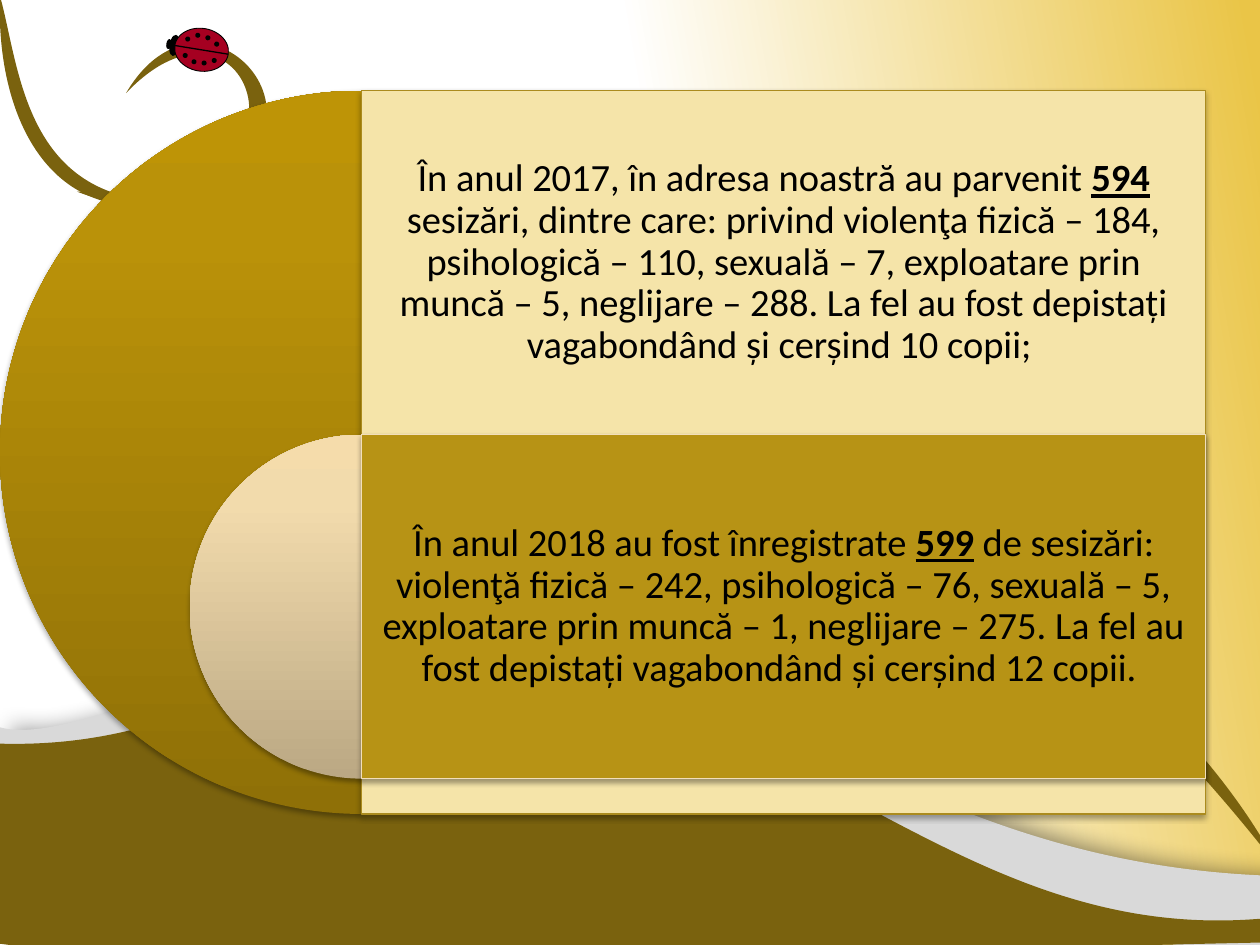
from dataclasses import dataclass
from math import cos, radians, sin

from lxml import etree
from pptx import Presentation
from pptx.dml.color import RGBColor
from pptx.enum.shapes import MSO_CONNECTOR, MSO_SHAPE
from pptx.enum.text import MSO_ANCHOR, PP_ALIGN
from pptx.oxml.ns import qn
from pptx.util import Inches, Pt

PIE, RECT, OVAL = MSO_SHAPE.PIE, MSO_SHAPE.RECTANGLE, MSO_SHAPE.OVAL
LINE = MSO_CONNECTOR.STRAIGHT
MIDDLE, CENTER = MSO_ANCHOR.MIDDLE, PP_ALIGN.CENTER


@dataclass(frozen=True)
class Theme:
    font: str = "Calibri"
    size: float = 22
    ink: str = "000000"
    sky: tuple = ((55, "FFFFFF"), (99, "EAC547"))
    mist: str = "D9D9D9"
    earth: str = "7A620E"
    bug: str = "A50021"
    gold: tuple = ((0, "8F7007"), (80, "BA9209"), (100, "BE9406"))
    sand: tuple = ((0, "BBA884"), (80, "F2DBAC"), (100, "F5DCAB"))
    pale: str = "F5E4A9"
    pale_edge: str = "AB8B1E"
    deep: str = "B79315"
    deep_edge: str = "F2DFBA"


@dataclass(frozen=True)
class Box:
    x: float
    y: float
    w: float
    h: float

    def emu(self):
        return [Inches(v) for v in (self.x, self.y, self.w, self.h)]


THEME = Theme()
SOFT = (35, 3.1, 1.8, 90)
WIDE = (40, 13, 10, 0)

# Frame, turn, then a start point and segments: two numbers make a line, six a curve.
MIST = (Box(-0.04, 4.99, 10.11, 2.6), 0, [
    (-0.04, 5.76), (-0.03, 6.2), (10.07, 7.6), (10.06, 6.95),
    (7.25, 6.84, 6.08, 5.27, 3.74, 4.99), (2.09, 4.96, 0.56, 5.99, -0.04, 5.76)])
PLANTS = [
    (Box(2.73, 1.84, 4.15, 9.8), 254.9, [
        (10.02, 7.29), (10.04, 7.48), (8.35, 7.51, 1.6, 7.73, -0.07, 7.48),
        (-0.05, 5.9), (2.05, 5.98, 2.32, 4.54, 5.2, 5.58),
        (7, 6.31, 8.16, 7.45, 10.02, 7.29)]),
    (Box(6.9, 2.42, 2.78, 1.97), 347.8, [
        (7.53, 4.57), (7.67, 4.12, 7.72, 3.33, 9.48, 2.33),
        (8.75, 2.24, 7.46, 2.47, 7.03, 2.95), (6.71, 3.4, 6.98, 4.17, 7.53, 4.57)]),
    (Box(7.09, 2.48, 2.59, 1.89), 347.8, [
        (7.53, 4.57), (6.91, 3.66, 7.54, 2.52, 9.48, 2.33),
        (8.75, 2.24, 7.92, 2.62, 7.49, 3.11), (7.18, 3.55, 6.98, 4.17, 7.53, 4.57)]),
    (Box(6.35, 4.97, 2.78, 1.97), 300.2, [
        (9.09, 5.6), (8.61, 5.59, 7.85, 5.4, 6.35, 6.75),
        (6.49, 6.04, 7.11, 4.88, 7.7, 4.62), (8.23, 4.46, 8.87, 4.95, 9.09, 5.6)]),
    (Box(6.43, 5.11, 2.59, 1.89), 300.2, [
        (9.09, 5.6), (8.41, 4.73, 7.13, 4.98, 6.35, 6.75),
        (6.49, 6.04, 7.11, 5.37, 7.71, 5.11), (8.23, 4.95, 8.87, 4.95, 9.09, 5.6)]),
    (Box(4.62, 4.32, 5.37, 3.11), 226.8, [
        (4.64, 5.32), (6.02, 3.99, 7.69, 3.73, 10.15, 6.89),
        (9.46, 5.58, 7.96, 4.46, 6.76, 4.1), (5.74, 3.91, 4.62, 4.06, 4.64, 5.32)]),
    (Box(0, -0.03, 2.12, 1.66), 0, [
        (0, -0.03), (0.14, 0.47, 0.18, 1.36, 1, 1.56),
        (2.61, 1.5, 1.96, -0.27, 1, 0.74), (1.7, -0.45, 3.12, 1.4, 1, 1.63),
        (0.27, 1.56, -0.03, 0.77, 0, -0.03)]),
    (Box(0.43, 1.68, 1.28, 1.04), 275.2, [
        (0.61, 1.52), (0.91, 1.64, 1.47, 1.71, 1.55, 2.22),
        (1.42, 3.18, 0.35, 2.69, 1.03, 2.17), (0.25, 2.52, 1.33, 3.48, 1.59, 2.22),
        (1.59, 1.77, 1.11, 1.55, 0.61, 1.52)]),
]

NOTES = [
    ("În anul 2017, în adresa noastră au parvenit ", "594",
     " sesizări, dintre care: privind violenţa fizică – 184, psihologică – 110, "
     "sexuală – 7, exploatare prin muncă – 5, neglijare – 288. La fel au fost "
     "depistați vagabondând și cerșind 10 copii; "),
    ("În anul 2018 au fost înregistrate ", "599",
     " de sesizări: violenţă fizică – 242, psihologică – 76, sexuală – 5, "
     "exploatare prin muncă – 1, neglijare – 275. La fel au fost depistați "
     "vagabondând și cerșind 12 copii. "),
]


def color(code):
    return RGBColor.from_string(code)


def blend(owner, fill, stops, angle):
    """Fill with gradient stops; the angle runs counter-clockwise."""
    fill.gradient()
    fill.gradient_angle = angle
    stop_list = owner.element.find(".//" + qn("a:gsLst"))
    for old in list(stop_list):
        stop_list.remove(old)
    for pos, code in stops:
        stop = etree.SubElement(stop_list, qn("a:gs"), pos=str(pos * 1000))
        etree.SubElement(stop, qn("a:srgbClr"), val=code)


def style(shape, fill, edge=None, width=0.75, shadow=None):
    if isinstance(fill, str):
        shape.fill.solid()
        shape.fill.fore_color.rgb = color(fill)
    else:
        blend(shape, shape.fill, fill, 90)
    if edge:
        shape.line.color.rgb = color(edge)
        shape.line.width = Pt(width)
    else:
        shape.line.fill.background()
    shape.shadow.inherit = False
    if shadow:
        alpha, blur, dist, angle = shadow
        effects = shape.element.spPr.find(qn("a:effectLst"))
        outer = etree.SubElement(
            effects, qn("a:outerShdw"), blurRad=str(Pt(blur)), dist=str(Pt(dist)),
            dir=str(angle * 60000), rotWithShape="0")
        tint = etree.SubElement(outer, qn("a:srgbClr"), val=THEME.ink)
        etree.SubElement(tint, qn("a:alpha"), val=str(alpha * 1000))


def outline(slide, plan, fill, shadow=None):
    """Draw a curved outline, turning its points back into the unturned frame."""
    box, turn, parts = plan
    left, top, width, height = box.emu()
    pen = slide.shapes.build_freeform(left, top)
    pen.add_line_segments([(left + width, top), (left + width, top + height)])
    shape = pen.convert_to_shape()
    path = shape.element.find(".//" + qn("a:path"))
    for old in list(path):
        path.remove(old)
    c, s = cos(radians(turn)), sin(radians(turn))
    for i, part in enumerate(parts):
        kind = "moveTo" if i == 0 else "lnTo" if len(part) == 2 else "cubicBezTo"
        step = etree.SubElement(path, qn("a:" + kind))
        for x, y in zip(part[::2], part[1::2]):
            dx, dy = x - box.x - box.w / 2, y - box.y - box.h / 2
            etree.SubElement(step, qn("a:pt"),
                             x=str(Inches(box.w / 2 + dx * c + dy * s)),
                             y=str(Inches(box.h / 2 - dx * s + dy * c)))
    etree.SubElement(path, qn("a:close"))
    shape.rotation = turn
    style(shape, fill, shadow=shadow)


def garden(slide):
    blend(slide, slide.background.fill, THEME.sky, 10)
    outline(slide, MIST, THEME.mist, WIDE)
    for plan in PLANTS:
        outline(slide, plan, THEME.earth)


def beetle(slide, box):
    def oval(x, y, w, h, fill=THEME.ink, edge=None):
        part = Box(box.x + x, box.y + y, w, h)
        shape = slide.shapes.add_shape(OVAL, *part.emu())
        shape.rotation = 279.3
        style(shape, fill, edge, 0.5)

    oval(0, 0.14, 0.17, 0.08)
    oval(0.13, 0, 0.34, 0.43, THEME.bug, THEME.ink)
    ends = (box.x + 0.08, box.y + 0.18, box.x + 0.51, box.y + 0.25)
    seam = slide.shapes.add_connector(LINE, *[Inches(v) for v in ends])
    seam.line.color.rgb = color(THEME.ink)
    seam.line.width = Pt(0.75)
    etree.SubElement(seam.element.spPr, qn("a:effectLst"))
    oval(0, 0.15, 0.08, 0.04)
    for x, y in ((0.15, 0.24), (0.22, 0.29), (0.3, 0.3), (0.38, 0.28),
                 (0.17, 0.11), (0.25, 0.08), (0.33, 0.1), (0.4, 0.15)):
        oval(x, y, 0.04, 0.04)


def note(slide, box, words):
    frame = slide.shapes.add_textbox(*box.emu()).text_frame
    frame.word_wrap = True
    frame.vertical_anchor = MIDDLE
    frame.margin_left = frame.margin_right = Inches(0.09)
    frame.margin_top = frame.margin_bottom = Inches(0.09)
    para = frame.paragraphs[0]
    para.alignment, para.line_spacing = CENTER, 0.9
    for i, text in enumerate(words):
        run = para.add_run()
        run.text = text
        font = run.font
        font.name, font.size = THEME.font, Pt(THEME.size)
        font.color.rgb = color(THEME.ink)
        font.bold = font.underline = i == 1


def target(slide, box):
    """Nested half discs, each with a panel from its centre to the right edge."""
    row = 2.73
    mid = box.x + box.h / 2
    width = box.x + box.w - mid
    looks = ((box.h, THEME.gold, THEME.pale, THEME.pale_edge),
             (row, THEME.sand, THEME.deep, THEME.deep_edge))
    for i, (size, disc, fill, edge) in enumerate(looks):
        top = box.y + i * row
        half = slide.shapes.add_shape(PIE, *Box(mid - size / 2, top, size, size).emu())
        half.adjustments[0], half.adjustments[1] = 54, 162
        style(half, disc, shadow=SOFT)
        panel = slide.shapes.add_shape(RECT, *Box(mid, top, width, size).emu())
        style(panel, fill, edge, shadow=SOFT)
        note(slide, Box(mid, top, width, row), NOTES[i])


def main():
    deck = Presentation()
    deck.slide_width, deck.slide_height = Inches(10), Inches(7.5)
    slide = deck.slides.add_slide(deck.slide_layouts[6])
    garden(slide)
    beetle(slide, Box(1.3, 0.18, 0.51, 0.43))
    target(slide, Box(0, 0.72, 9.57, 5.74))
    deck.save("out.pptx")


if __name__ == "__main__":
    main()
